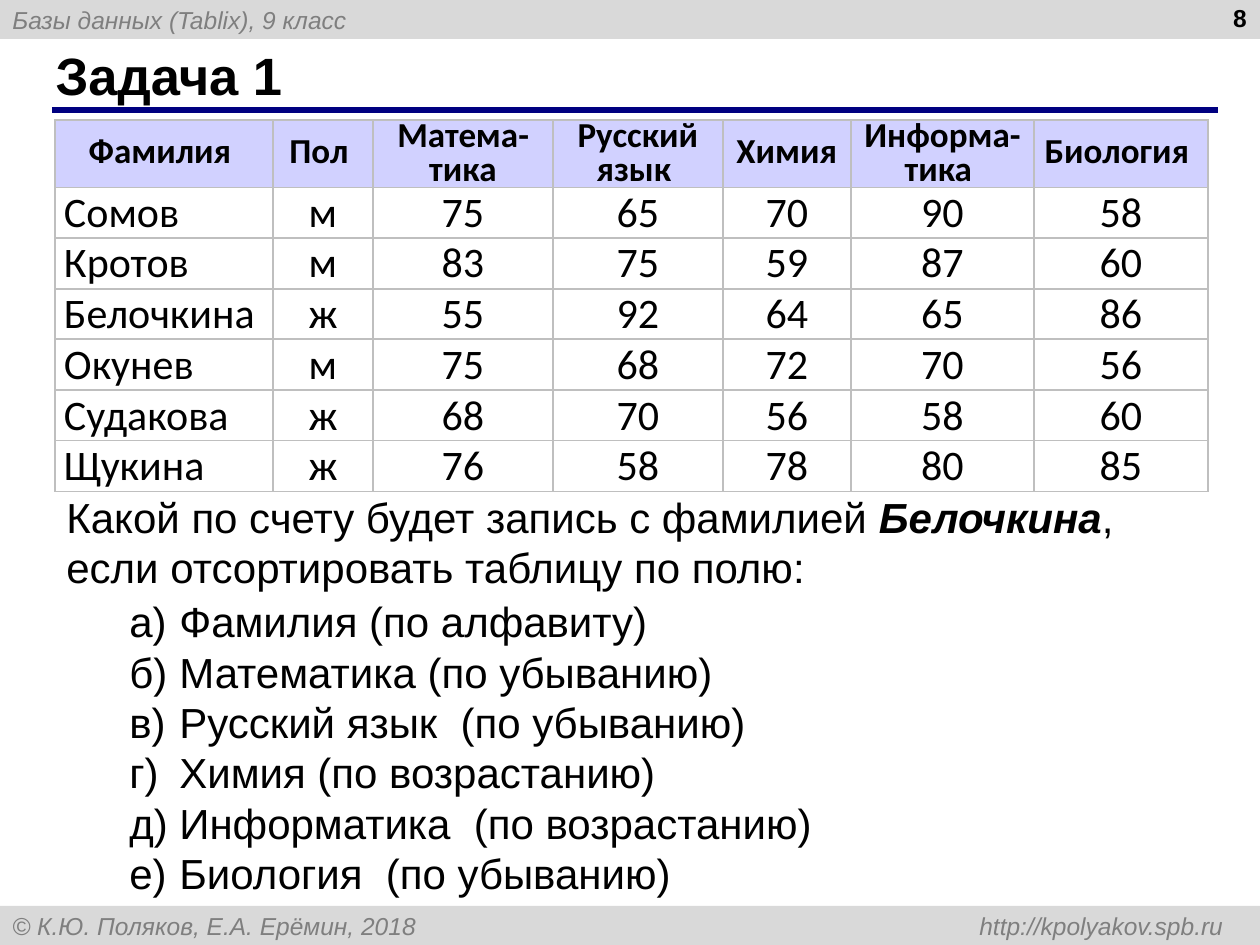
"""Builds the slide "Задача 1" with a pupils' marks table and sorting questions."""
from dataclasses import dataclass, replace

from lxml import etree
from pptx import Presentation
from pptx.dml.color import RGBColor
from pptx.enum.shapes import MSO_CONNECTOR, MSO_SHAPE
from pptx.enum.text import MSO_ANCHOR, MSO_AUTO_SIZE, PP_ALIGN
from pptx.oxml.ns import qn
from pptx.util import Emu, Pt

LEFT, CENTER, RIGHT = PP_ALIGN.LEFT, PP_ALIGN.CENTER, PP_ALIGN.RIGHT
TOP, MIDDLE = MSO_ANCHOR.TOP, MSO_ANCHOR.MIDDLE
NO_AUTOFIT = MSO_AUTO_SIZE.NONE
RECTANGLE, STRAIGHT = MSO_SHAPE.RECTANGLE, MSO_CONNECTOR.STRAIGHT
TITLE_ONLY = 5
PX_PER_INCH = 126
SLIDE_WIDTH, SLIDE_HEIGHT = 1260, 945
BAR_HEIGHT = 39


@dataclass(frozen=True)
class TextStyle:
    """Look of a run of text."""
    size: int
    font: str = "Arial"
    color: str = "000000"
    bold: bool = False
    italic: bool = False


@dataclass(frozen=True)
class Theme:
    """Colours and text styles of the slide."""
    bar_fill: str = "D9D9D9"
    rule: str = "000080"
    header_fill: str = "D1D1FF"
    border: str = "BFBFBF"
    bar: TextStyle = TextStyle(14, color="7F7F7F", italic=True)
    title: TextStyle = TextStyle(30, bold=True)
    number: TextStyle = TextStyle(14, bold=True)
    body: TextStyle = TextStyle(24)
    header: TextStyle = TextStyle(20, "Calibri", bold=True)
    cell: TextStyle = TextStyle(24, "Calibri")
    body_line: float = 28.8
    header_line: float = 0.8


HEADERS = ["Фамилия ", "Пол ", "Матема-тика", "Русский язык ", "Химия",
           "Информа-тика ", "Биология "]
PUPILS = [
    ["Сомов", "м", 75, 65, 70, 90, 58],
    ["Кротов", "м", 83, 75, 59, 87, 60],
    ["Белочкина", "ж", 55, 92, 64, 65, 86],
    ["Окунев", "м", 75, 68, 72, 70, 56],
    ["Судакова", "ж", 68, 70, 56, 58, 60],
    ["Щукина", "ж", 76, 58, 78, 80, 85],
]
COLUMN_WIDTHS = [218, 100, 180, 170, 128, 183, 174]
ROW_HEIGHTS = [67] + [50, 51] * 3
TASKS = ["а)\tФамилия (по алфавиту)", "б)\tМатематика (по убыванию)",
         "в)\tРусский язык  (по убыванию)", "г)\tХимия (по возрастанию)",
         "д)\tИнформатика  (по возрастанию)", "е)\tБиология  (по убыванию)"]


def px(length):
    """Turn pixels into EMU."""
    return Emu(round(length * 914400 / PX_PER_INCH))


def rgb(color):
    """Turn a hex string into a colour."""
    return RGBColor.from_string(color)


class SlideBuilder:
    """Adds styled elements to one slide."""

    def __init__(self, slide, theme):
        """Keep the slide and its theme."""
        self.slide = slide
        self.theme = theme

    def add_runs(self, paragraph, runs, align=LEFT, spacing=None):
        """Fill a paragraph with (text, style) runs."""
        paragraph.alignment = align
        if spacing is not None:
            paragraph.line_spacing = spacing
        for text, style in runs:
            run = paragraph.add_run()
            run.text = text
            run.font.size = Pt(style.size)
            run.font.name = style.font
            run.font.bold = style.bold
            run.font.italic = style.italic
            run.font.color.rgb = rgb(style.color)

    def title(self, text, left, top, width, height):
        """Place and fill the title placeholder."""
        shape = self.slide.shapes.title
        shape.left, shape.top, shape.width, shape.height = map(px, (left, top, width, height))
        frame = shape.text_frame
        frame.auto_size = NO_AUTOFIT
        frame.vertical_anchor = MIDDLE
        self.add_runs(frame.paragraphs[0], [(text, self.theme.title)])

    def bar(self, text, top, right_tab=None):
        """Add a full-width grey bar with a caption."""
        shape = self.slide.shapes.add_shape(
            RECTANGLE, 0, px(top), px(SLIDE_WIDTH), px(BAR_HEIGHT))
        shape.shadow.inherit = False
        shape.fill.solid()
        shape.fill.fore_color.rgb = rgb(self.theme.bar_fill)
        shape.line.fill.background()
        shape.text_frame.vertical_anchor = MIDDLE
        paragraph = shape.text_frame.paragraphs[0]
        self.add_runs(paragraph, [(text, self.theme.bar)])
        if right_tab is not None:
            properties = paragraph._p.get_or_add_pPr()
            tabs = etree.SubElement(properties, qn("a:tabLst"))
            etree.SubElement(tabs, qn("a:tab"), pos=str(px(right_tab)), algn="r")

    def rule(self, left, right, y):
        """Add a horizontal line."""
        connector = self.slide.shapes.add_connector(
            STRAIGHT, px(left), px(y), px(right), px(y))
        connector.line.color.rgb = rgb(self.theme.rule)
        connector.line.width = Pt(3)
        etree.SubElement(connector._element.spPr, qn("a:effectLst"))

    def text(self, paragraphs, left, top, width, height,
             anchor=TOP, align=LEFT, spacing=None, hanging=0):
        """Add a text box, with an optional hanging indent."""
        box = self.slide.shapes.add_textbox(*map(px, (left, top, width, height)))
        frame = box.text_frame
        frame.word_wrap = True
        frame.vertical_anchor = anchor
        for index, runs in enumerate(paragraphs):
            paragraph = frame.add_paragraph() if index else frame.paragraphs[0]
            self.add_runs(paragraph, runs, align, spacing)
            if hanging:
                properties = paragraph._p.get_or_add_pPr()
                properties.set("marL", str(px(hanging)))
                properties.set("indent", str(-px(hanging)))

    def border(self, cell):
        """Draw a thin line on every side of a cell."""
        properties = cell._tc.get_or_add_tcPr()
        for side in ("a:lnL", "a:lnR", "a:lnT", "a:lnB"):
            line = etree.SubElement(properties, qn(side), w=str(Pt(1)))
            fill = etree.SubElement(line, qn("a:solidFill"))
            etree.SubElement(fill, qn("a:srgbClr"), val=self.theme.border)

    def cell(self, cell, value, is_header, align):
        """Format and fill one table cell."""
        theme = self.theme
        cell.margin_left = cell.margin_right = px(9)
        cell.margin_top = cell.margin_bottom = 0
        cell.vertical_anchor = MIDDLE if is_header else TOP
        self.border(cell)
        if is_header:
            cell.fill.solid()
            cell.fill.fore_color.rgb = rgb(theme.header_fill)
        else:
            cell.fill.background()
        style = theme.header if is_header else theme.cell
        self.add_runs(cell.text_frame.paragraphs[0], [(str(value), style)], align,
                      theme.header_line if is_header else None)

    def table(self, rows, left, top, widths, heights):
        """Add a table whose first row is the header."""
        table = self.slide.shapes.add_table(
            len(rows), len(widths), px(left), px(top),
            px(sum(widths)), px(sum(heights))).table
        table.first_row = table.horz_banding = False
        for column, width in zip(table.columns, widths):
            column.width = px(width)
        for row, height in zip(table.rows, heights):
            row.height = px(height)
        for r, values in enumerate(rows):
            for c, value in enumerate(values):
                align = LEFT if r and not c else CENTER
                self.cell(table.cell(r, c), value, r == 0, align)


def main():
    """Build and save the presentation."""
    presentation = Presentation()
    presentation.slide_width, presentation.slide_height = px(SLIDE_WIDTH), px(SLIDE_HEIGHT)
    slide = presentation.slides.add_slide(presentation.slide_layouts[TITLE_ONLY])
    theme = Theme()
    builder = SlideBuilder(slide, theme)
    body = theme.body
    line = Pt(theme.body_line)
    builder.bar("Базы данных (Tablix), 9 класс", 0)
    builder.bar("© К.Ю. Поляков, Е.А. Ерёмин, 2018 \thttp://kpolyakov.spb.ru",
                SLIDE_HEIGHT - BAR_HEIGHT, right_tab=1211)
    builder.rule(52, 1218, 110)
    builder.title("Задача 1", 43, 42, 1154, 66)
    builder.text([[("8", theme.number)]], 965, -3, 294, 66, align=RIGHT)
    question = [("Какой по счету будет запись с фамилией ", body),
                ("Белочкина", replace(body, bold=True, italic=True)),
                (", если отсортировать таблицу по полю:", body)]
    builder.text([question], 54, 485, 1168, 115, spacing=line)
    builder.text([[(task, body)] for task in TASKS], 117, 588, 871, 318,
                 anchor=MIDDLE, spacing=line, hanging=50)
    builder.table([HEADERS] + PUPILS, 55, 120, COLUMN_WIDTHS, ROW_HEIGHTS)
    presentation.save("out.pptx")


if __name__ == "__main__":
    main()
